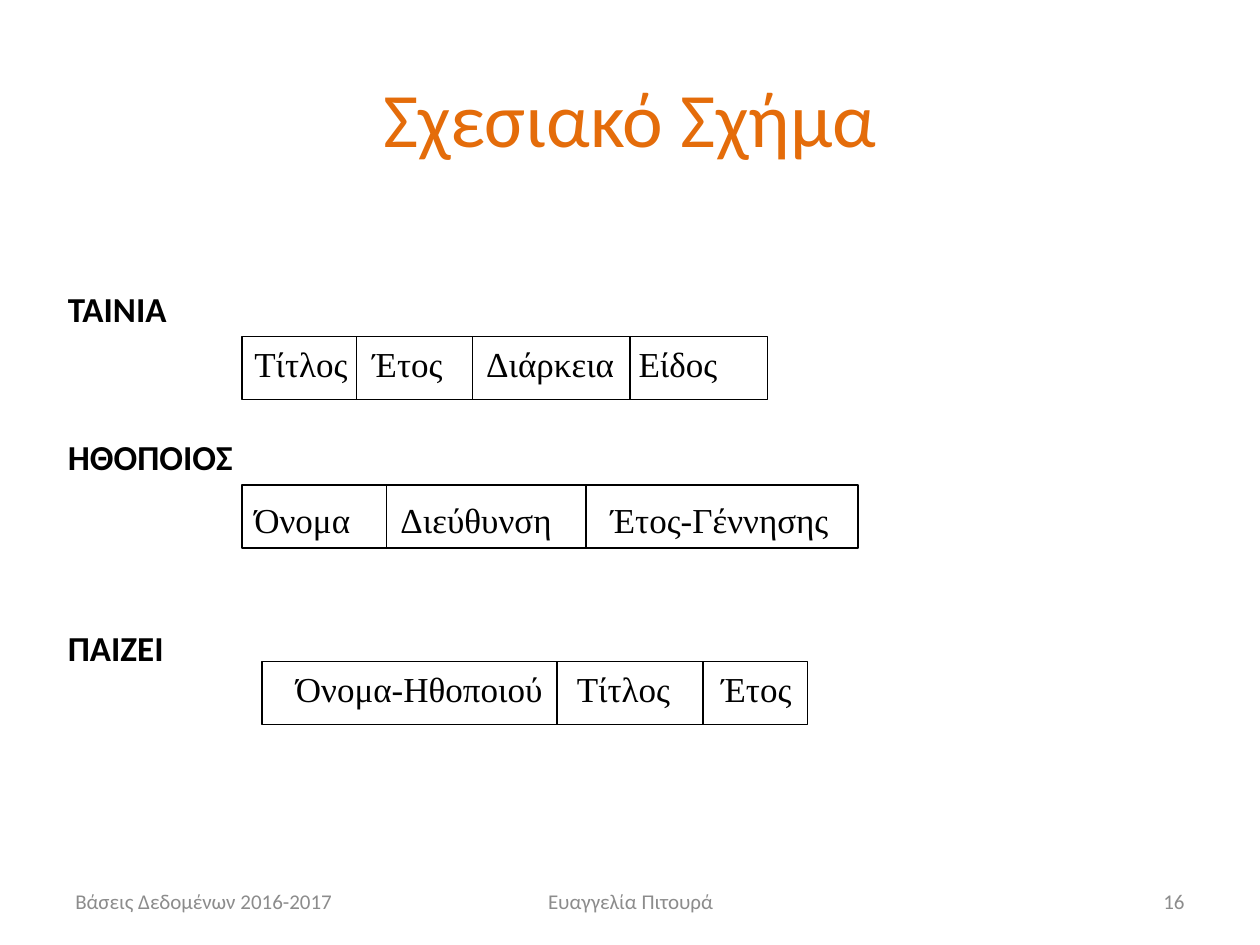
from dataclasses import dataclass

from lxml import etree
from pptx import Presentation
from pptx import util as u
from pptx.dml.color import RGBColor
from pptx.enum import shapes, text
from pptx.oxml.ns import qn

EMU_PER_PX = 9144  # 100 px to the inch
BLACK, GRAY, ORANGE = "000000", "8C8C8C", "E46C0A"
ROW_HEIGHT = 50
LABEL_LEFT = 44
LINE_HEIGHT = 43


@dataclass(frozen=True)
class TextStyle:
    font: str
    size: int
    color: str
    bold: bool = False
    align: text.PP_ALIGN = text.PP_ALIGN.LEFT
    anchor: text.MSO_ANCHOR = text.MSO_ANCHOR.TOP


@dataclass(frozen=True)
class Relation:
    name: str
    label_top: int
    left: int
    top: int
    width: int
    dividers: tuple[int, ...]  # slide x of each column border
    attributes: tuple[str, ...]
    text_left: int
    text_top: int
    text_width: int
    tabs: tuple[int, ...]  # offsets from the start of the text


LABEL = TextStyle("Calibri", 20, BLACK, bold=True)
ATTRIBUTE = TextStyle("Times New Roman", 20, BLACK)
TITLE = TextStyle("Calibri", 44, ORANGE, align=text.PP_ALIGN.CENTER,
                  anchor=text.MSO_ANCHOR.MIDDLE)

RELATIONS = (
    Relation("ΤΑΙΝΙΑ", 223, 192, 267, 417, (283, 375, 500),
             ("Τίτλος", "Έτος", "Διάρκεια", "Είδος"),
             192, 267, 767, (94, 184, 305)),
    Relation("ΗΘΟΠΟΙΟΣ", 341, 192, 385, 489, (307, 465),
             ("Όνομα", "Διεύθυνση", "Έτος-Γέννησης"),
             192, 391, 572, (116, 283)),
    Relation("ΠΑΙΖΕΙ", 492, 208, 525, 433, (442, 558),
             ("Όνομα-Ηθοποιού", "Τίτλος", "Έτος"),
             225, 525, 567, (223, 338)),
)

FOOTERS = (
    (50, 233, "Βάσεις Δεδομένων 2016-2017", text.PP_ALIGN.LEFT),
    (342, 317, "Ευαγγελία Πιτουρά", text.PP_ALIGN.CENTER),
    (717, 233, "16", text.PP_ALIGN.RIGHT),
)


def px(length: int) -> u.Emu:
    return u.Emu(length * EMU_PER_PX)


def rgb(color: str) -> RGBColor:
    return RGBColor.from_string(color)


def add_text(parent, left: int, top: int, width: int, height: int,
             content: str, style: TextStyle, tabs: tuple[int, ...] = ()) -> None:
    shape = parent.add_textbox(px(left), px(top), px(width), px(height))
    frame = shape.text_frame
    frame.word_wrap = True
    frame.vertical_anchor = style.anchor
    paragraph = frame.paragraphs[0]
    paragraph.alignment = style.align
    run = paragraph.add_run()
    run.text = content
    formats = {"name": style.font, "size": u.Pt(style.size), "bold": style.bold}
    for name, value in formats.items():
        setattr(run.font, name, value)
    run.font.color.rgb = rgb(style.color)
    if tabs:
        tab_list = etree.SubElement(paragraph._p.get_or_add_pPr(), qn("a:tabLst"))
        for position in tabs:
            etree.SubElement(tab_list, qn("a:tab"), pos=str(px(position)), algn="l")


def set_line(shape) -> None:
    shape.line.color.rgb = rgb(BLACK)
    shape.line.width = u.Pt(0.75)


def add_divider(parent, x: int, top: int) -> None:
    connector = parent.add_connector(shapes.MSO_CONNECTOR.STRAIGHT,
                                     px(x), px(top), px(x), px(top + ROW_HEIGHT))
    set_line(connector)
    etree.SubElement(connector._element.spPr, qn("a:effectLst"))


def add_relation(slide, relation: Relation) -> None:
    add_text(slide.shapes, LABEL_LEFT, relation.label_top, 300, LINE_HEIGHT,
             relation.name, LABEL)
    group = slide.shapes.add_group_shape().shapes
    add_text(group, relation.text_left, relation.text_top, relation.text_width,
             LINE_HEIGHT, "\t".join(relation.attributes), ATTRIBUTE, relation.tabs)
    frame = group.add_shape(shapes.MSO_SHAPE.RECTANGLE, px(relation.left),
                            px(relation.top), px(relation.width), px(ROW_HEIGHT))
    frame.shadow.inherit = False
    frame.fill.background()
    set_line(frame)
    for x in relation.dividers:
        add_divider(group, x, relation.top)


def main() -> None:
    presentation = Presentation()
    presentation.slide_width, presentation.slide_height = px(1000), px(750)
    slide = presentation.slides.add_slide(presentation.slide_layouts[6])

    # Title
    add_text(slide.shapes, 50, 30, 900, 125, "Σχεσιακό Σχήμα", TITLE)

    # Relation schemas
    for relation in RELATIONS:
        add_relation(slide, relation)

    # Footer
    for left, width, content, align in FOOTERS:
        style = TextStyle("Calibri", 12, GRAY, align=align,
                          anchor=text.MSO_ANCHOR.MIDDLE)
        add_text(slide.shapes, left, 695, width, 40, content, style)

    presentation.save("out.pptx")


if __name__ == "__main__":
    main()
